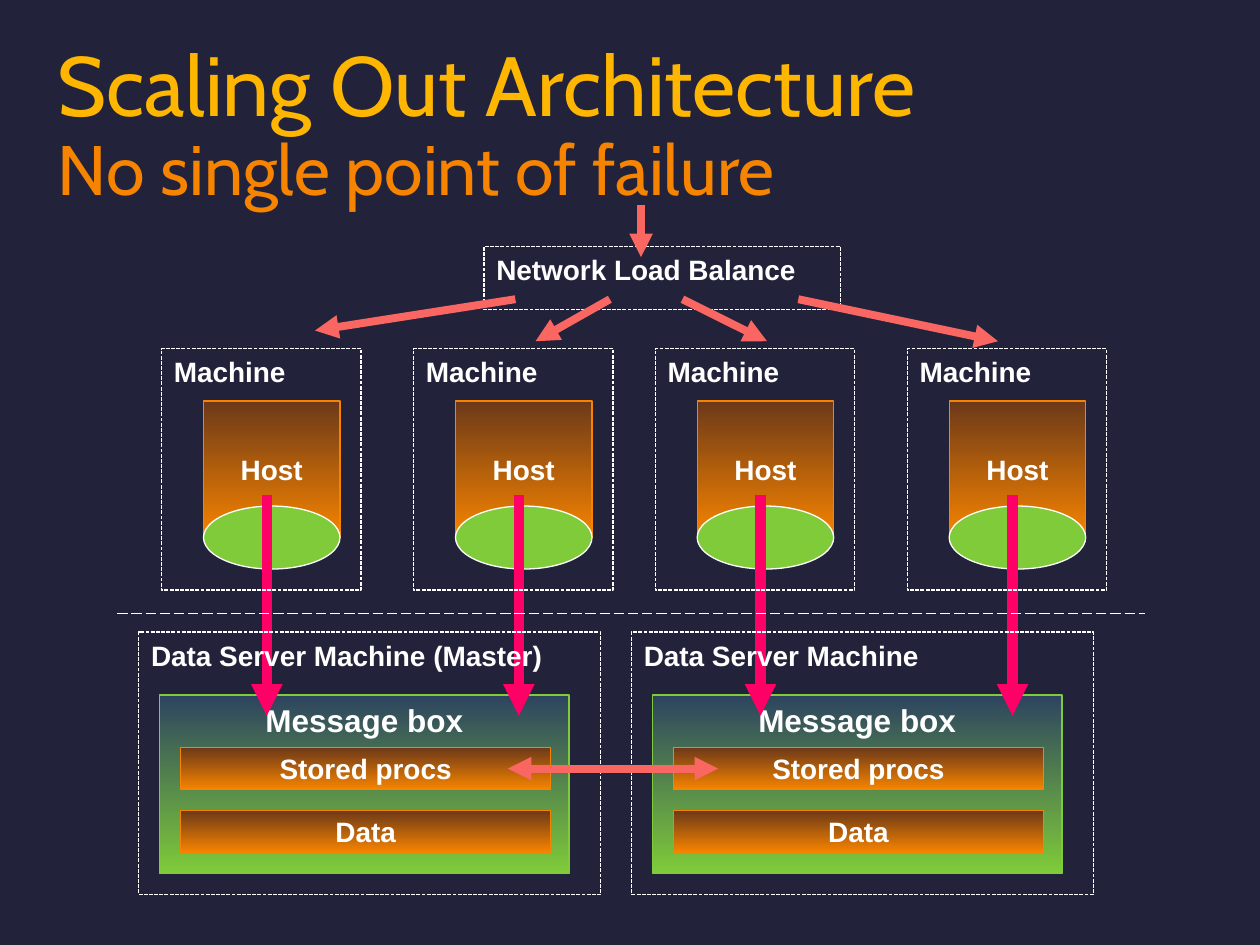
from dataclasses import dataclass
from typing import Optional

from lxml import etree
from pptx import Presentation
from pptx.dml.color import RGBColor
from pptx.enum.dml import MSO_LINE
from pptx.enum.shapes import MSO_CONNECTOR, MSO_SHAPE
from pptx.enum.text import MSO_ANCHOR, PP_ALIGN
from pptx.oxml.ns import qn
from pptx.util import Pt

RECTANGLE, ELLIPSE = MSO_SHAPE.RECTANGLE, MSO_SHAPE.OVAL
STRAIGHT = MSO_CONNECTOR.STRAIGHT
DOTTED, DASHED = MSO_LINE.SQUARE_DOT, MSO_LINE.LONG_DASH
TOP, MIDDLE = MSO_ANCHOR.TOP, MSO_ANCHOR.MIDDLE
LEFT, CENTER = PP_ALIGN.LEFT, PP_ALIGN.CENTER

NAVY = RGBColor(0x22, 0x23, 0x3A)
WHITE = RGBColor(0xFF, 0xFF, 0xFF)
YELLOW = RGBColor(0xFF, 0xB6, 0x01)
ORANGE = RGBColor(0xF6, 0x84, 0x00)
BROWN = RGBColor(0x6D, 0x39, 0x18)
SLATE = RGBColor(0x2D, 0x44, 0x5F)
GREEN = RGBColor(0x7F, 0xCB, 0x39)
CORAL = RGBColor(0xFA, 0x66, 0x62)
PINK = RGBColor(0xFF, 0x00, 0x66)

MACHINE_LEFTS = (92.3, 236.3, 374.4, 518.4)
DATABASES = ((360.8, "Data Server Machine"), (79.2, "Data Server Machine (Master)"))


@dataclass(frozen=True)
class Box:
    left: float
    top: float
    width: float
    height: float
    text: str = ""
    size: float = 16
    align: PP_ALIGN = CENTER
    anchor: MSO_ANCHOR = MIDDLE


@dataclass(frozen=True)
class Line:
    x1: float
    y1: float
    x2: float
    y2: float
    color: RGBColor = CORAL
    width: float = 4.5
    head: bool = False
    tail: bool = True
    dash: Optional[MSO_LINE] = None


BALANCER_ARROWS = (
    Line(294.5, 171, 180, 188.9),
    Line(366.3, 117, 366.3, 147),
    Line(390, 171, 438.3, 195),
    Line(348.5, 171, 306, 195),
    Line(456.2, 171, 570.3, 195),
)


def add_run(paragraph, text: str, size: float, font: str, color: RGBColor, bold: bool) -> None:
    run = paragraph.add_run()
    run.text = text
    run.font.size = Pt(size)
    run.font.name = font
    run.font.bold = bold
    run.font.color.rgb = color


def add_box(slide, box: Box, preset: MSO_SHAPE, outline: RGBColor):
    shape = slide.shapes.add_shape(
        preset, Pt(box.left), Pt(box.top), Pt(box.width), Pt(box.height))
    shape.shadow.inherit = False
    shape.line.color.rgb = outline
    shape.line.width = Pt(0.75)
    if box.text:
        frame = shape.text_frame
        frame.word_wrap = False
        frame.vertical_anchor = box.anchor
        paragraph = frame.paragraphs[0]
        paragraph.alignment = box.align
        add_run(paragraph, box.text, box.size, "Arial", WHITE, True)
    return shape


def add_gradient_box(slide, box: Box, upper: RGBColor, lower: RGBColor) -> None:
    fill = add_box(slide, box, RECTANGLE, lower).fill
    fill.gradient()
    fill.gradient_angle = 270
    for stop, color, position in zip(fill.gradient_stops, (upper, lower), (0, 1)):
        stop.color.rgb = color
        stop.position = position


def add_dotted_frame(slide, left: float, top: float, width: float, height: float,
                     label: str) -> None:
    box = Box(left, top, width, height, label, align=LEFT, anchor=TOP)
    shape = add_box(slide, box, RECTANGLE, WHITE)
    shape.fill.background()
    shape.line.dash_style = DOTTED


def add_line(slide, line: Line) -> None:
    connector = slide.shapes.add_connector(
        STRAIGHT, Pt(line.x1), Pt(line.y1), Pt(line.x2), Pt(line.y2))
    connector.line.color.rgb = line.color
    connector.line.width = Pt(line.width)
    if line.dash is not None:
        connector.line.dash_style = line.dash
    outline = connector.line._get_or_add_ln()
    for tag, wanted in (("a:headEnd", line.head), ("a:tailEnd", line.tail)):
        if wanted:
            etree.SubElement(outline, qn(tag), type="triangle")
    etree.SubElement(connector._element.spPr, qn("a:effectLst"))


def add_title(slide) -> None:
    box = slide.shapes.add_textbox(Pt(26), Pt(21.6), Pt(661), Pt(59))
    box.text_frame.word_wrap = True
    paragraph = box.text_frame.paragraphs[0]
    paragraph.line_spacing = 0.9
    add_run(paragraph, "Scaling Out Architecture", 48, "Cabin", YELLOW, False)
    paragraph.add_line_break()
    add_run(paragraph, "No single point of failure", 40, "Cabin", ORANGE, False)


def add_machine(slide, left: float) -> None:
    add_gradient_box(slide, Box(left + 24, 229.2, 78, 78, "Host"), BROWN, ORANGE)
    disk = add_box(slide, Box(left + 24, 289.2, 78, 36), ELLIPSE, WHITE)
    disk.fill.solid()
    disk.fill.fore_color.rgb = GREEN
    add_line(slide, Line(left + 60.2, 283, left + 60.2, 409, PINK, 6))
    add_dotted_frame(slide, left, 199.2, 114, 138, "Machine")


def add_database(slide, left: float, label: str) -> None:
    for top, text in ((427.2, "Stored procs"), (463.2, "Data")):
        add_gradient_box(slide, Box(left + 24, top, 211.5, 24, text), BROWN, ORANGE)
    add_dotted_frame(slide, left, 361.2, 264, 150, label)


def main() -> None:
    presentation = Presentation()
    presentation.slide_width, presentation.slide_height = Pt(720), Pt(540)
    slide = presentation.slides.add_slide(presentation.slide_layouts[6])
    slide.background.fill.solid()
    slide.background.fill.fore_color.rgb = NAVY

    for left, _ in DATABASES:
        message_box = Box(left + 12, 397.2, 234, 102, "Message box", 18, anchor=TOP)
        add_gradient_box(slide, message_box, SLATE, GREEN)
    add_title(slide)
    add_dotted_frame(slide, 276.5, 141, 204, 36, "Network Load Balance")
    for arrow in BALANCER_ARROWS:
        add_line(slide, arrow)
    for left in MACHINE_LEFTS:
        add_machine(slide, left)
    add_line(slide, Line(67, 350.4, 654.5, 350.4, WHITE, 0.75, tail=False, dash=DASHED))
    for left, label in DATABASES:
        add_database(slide, left, label)
    add_line(slide, Line(290.2, 439.2, 410.4, 439.2, head=True))

    presentation.save("out.pptx")


if __name__ == "__main__":
    main()
